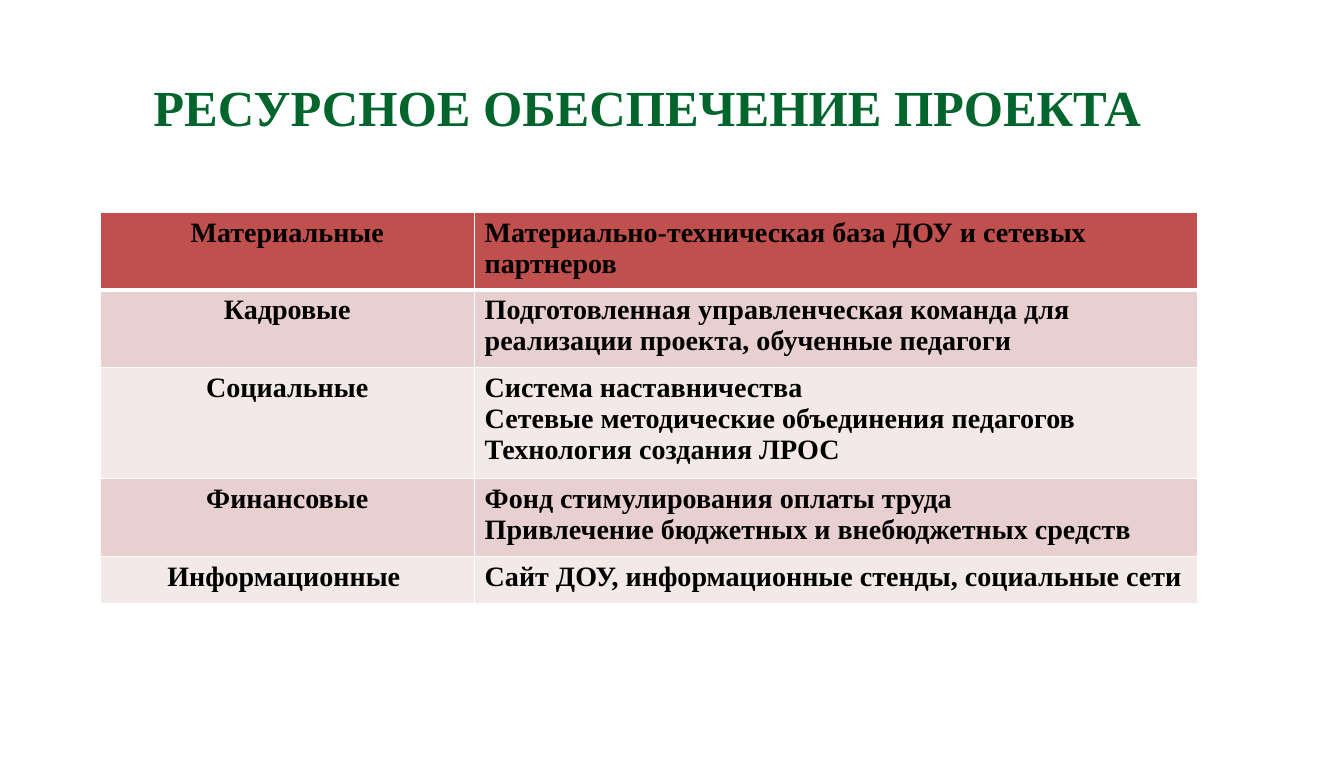
from pptx import Presentation
from pptx.dml.color import RGBColor as Rgb
from pptx.enum.text import MSO_ANCHOR as Anchor, PP_ALIGN as Align
from pptx.oxml import parse_xml
from pptx.oxml.ns import nsdecls
from pptx.util import Inches, Pt

TITLE = "РЕСУРСНОЕ ОБЕСПЕЧЕНИЕ ПРОЕКТА "
ROWS = [
    ("Материальные", ["Материально-техническая база ДОУ и сетевых партнеров"], 0.77),
    ("Кадровые", ["Подготовленная управленческая команда для реализации проекта, "
                  "обученные педагоги"], 0.77),
    ("Социальные", ["Система наставничества",
                    "Сетевые методические объединения педагогов",
                    "Технология создания ЛРОС"], 1.1),
    ("Финансовые", ["Фонд стимулирования оплаты труда",
                    "Привлечение бюджетных и внебюджетных средств"], 0.77),
    ("Информационные ", ["Сайт ДОУ, информационные стенды, социальные сети"], 0.47),
]
COLS = [3.71, 7.16]
THEME = {
    "font": "Times New Roman", "title": "00642D", "text": "000000",
    "head": "C0504D", "bands": ["F4E9E9", "E8D0D0"], "rule": "FFFFFF",
    "big": 36, "body": 20, "thin": 1, "thick": 3,
}


def write(frame, lines, size, color, align=Align.LEFT, spacing=None):
    for i, line in enumerate(lines):
        para = frame.add_paragraph() if i else frame.paragraphs[0]
        para.alignment = align
        if spacing:
            para.line_spacing = spacing
        run = para.add_run()
        run.text = line
        font = run.font
        font.name, font.size, font.bold = THEME["font"], Pt(size), True
        font.color.rgb = Rgb.from_string(color)


def edge(cell, side, width):
    cell._tc.get_or_add_tcPr().append(parse_xml(
        f'<a:ln{side} {nsdecls("a")} w="{Pt(width)}"><a:solidFill>'
        f'<a:srgbClr val="{THEME["rule"]}"/></a:solidFill></a:ln{side}>'))


def style(cell, row):
    thick = {(0, "B"), (1, "T")}
    for side in "LRTB":
        edge(cell, side, THEME["thick" if (row, side) in thick else "thin"])
    cell.fill.solid()
    color = THEME["bands"][row % 2] if row else THEME["head"]
    cell.fill.fore_color.rgb = Rgb.from_string(color)


def add_title(slide):
    box = slide.shapes.add_textbox(Inches(0.2), Inches(0.82), Inches(12.55), Inches(0.73))
    frame = box.text_frame
    frame.word_wrap = True
    frame.vertical_anchor = Anchor.TOP
    frame.margin_left = frame.margin_right = frame.margin_top = frame.margin_bottom = 0
    write(frame, [TITLE], THEME["big"], THEME["title"], Align.CENTER, 0.9)


def add_grid(slide):
    high = sum(row[2] for row in ROWS)
    grid = slide.shapes.add_table(len(ROWS), len(COLS), Inches(0.99), Inches(2.1),
                                  Inches(sum(COLS)), Inches(high)).table
    for col, width in zip(grid.columns, COLS):
        col.width = Inches(width)
    for r, (name, lines, height) in enumerate(ROWS):
        grid.rows[r].height = Inches(height)
        for c, (text, align) in enumerate([([name], Align.CENTER), (lines, Align.LEFT)]):
            cell = grid.cell(r, c)
            style(cell, r)
            write(cell.text_frame, text, THEME["body"], THEME["text"], align)


def main():
    deck = Presentation()
    deck.slide_width, deck.slide_height = Inches(13.31), Inches(7.5)
    slide = deck.slides.add_slide(deck.slide_layouts[6])
    add_title(slide)
    add_grid(slide)
    deck.save("out.pptx")


if __name__ == "__main__":
    main()
